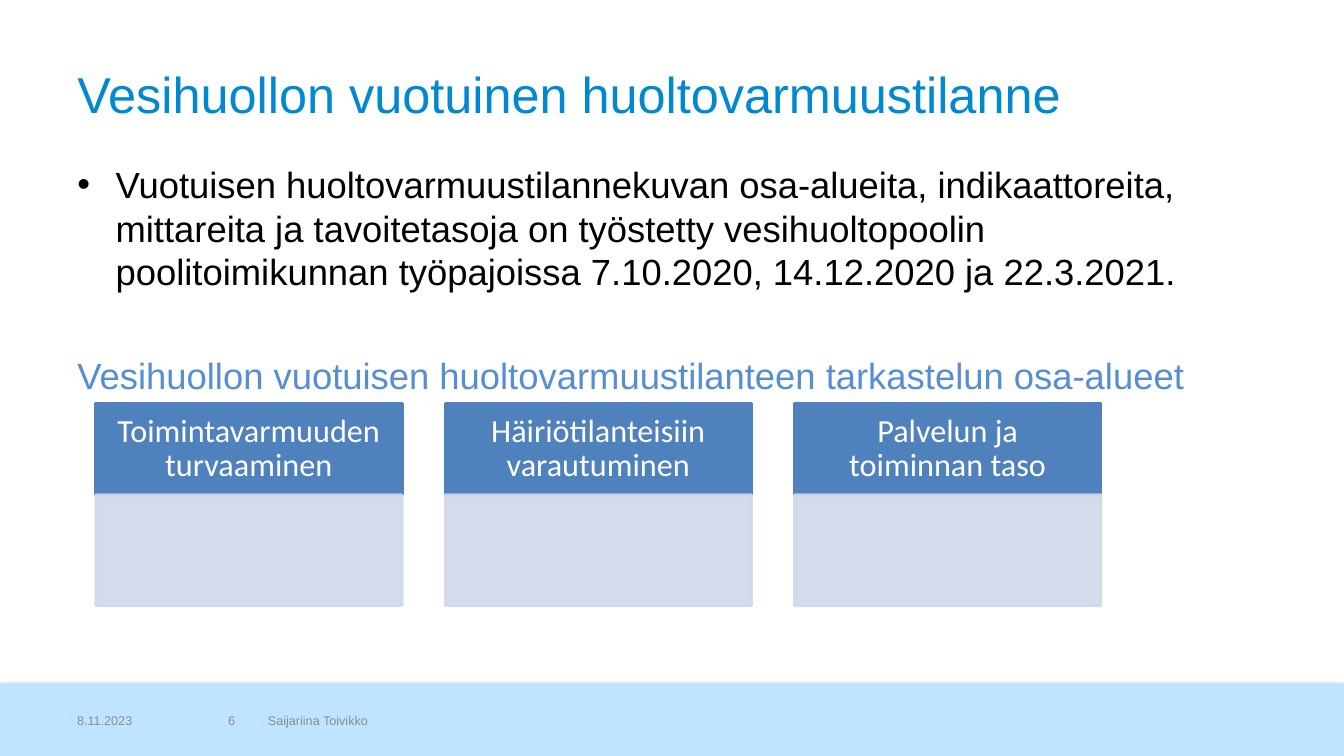
from pptx import Presentation
from pptx.dml.color import RGBColor
from pptx.enum.shapes import MSO_SHAPE
from pptx.enum.text import MSO_ANCHOR, MSO_AUTO_SIZE, PP_ALIGN
from pptx.oxml import parse_xml
from pptx.oxml.ns import nsdecls
from pptx.util import Inches, Pt


def color(value):
    return RGBColor.from_string(value)


def apply(target, values):
    for name, value in values.items():
        setattr(target, name, value)


class Slide:
    """A page on a grid of 40 columns by 30 rows."""

    COLUMNS, ROWS = 40, 30
    MARGIN = 2
    BLUE, PALE, BAND = "4F81BD", "D0D8E8", "BEE4FF"
    TITLE = {"name": "Arial", "size": Pt(36), "color": "0088D0"}
    BODY = {"name": "Arial", "size": Pt(26), "color": "000000"}
    SUBHEAD = {**BODY, "color": "558ED5"}
    FOOTER = {"name": "Arial", "size": Pt(9), "color": "8C8C8C"}
    HEADER = {"name": "Calibri", "size": Pt(23), "color": "FFFFFF"}

    def __init__(self, deck):
        self.deck = deck
        self.page = deck.slides.add_slide(deck.slide_layouts[1])

    def area(self, column, row, columns, rows):
        across = self.deck.slide_width / self.COLUMNS
        down = self.deck.slide_height / self.ROWS
        return (round(column * across), round(row * down),
                round(columns * across), round(rows * down))

    def move(self, box, *cells):
        apply(box, dict(zip(("left", "top", "width", "height"), self.area(*cells))))

    def add_span(self, para, text, style, **layout):
        span = para.add_run()
        span.text = text
        apply(span.font, {"name": style["name"], "size": style["size"]})
        span.font.color.rgb = color(style["color"])
        apply(para, {"alignment": PP_ALIGN.LEFT, **layout})

    def title(self, text, *cells):
        box = self.page.shapes.title
        self.move(box, *cells)
        apply(box.text_frame, {"vertical_anchor": MSO_ANCHOR.MIDDLE,
                               "auto_size": MSO_AUTO_SIZE.NONE})
        self.add_span(box.text_frame.paragraphs[0], text, self.TITLE)

    def body(self, bullet, subhead, *cells):
        box = self.page.placeholders[1]
        self.move(box, *cells)
        frame = box.text_frame
        frame.auto_size = MSO_AUTO_SIZE.NONE
        indent = Inches(0.38)
        first, second = frame.paragraphs[0], frame.add_paragraph()
        for para, left, mark in ((first, indent, '<a:buChar {} char="•"/>'),
                                 (second, 0, "<a:buNone {}/>")):
            properties = para._p.get_or_add_pPr()
            properties.set("marL", str(left))
            properties.set("indent", str(-left))
            properties.append(parse_xml(mark.format(nsdecls("a"))))
        self.add_span(first, bullet, self.BODY, space_before=Pt(0))
        self.add_span(second, subhead, self.SUBHEAD, space_before=Pt(43))

    def rectangle(self, fill, *cells, line=None, opacity=None):
        box = self.page.shapes.add_shape(MSO_SHAPE.RECTANGLE, *self.area(*cells))
        box.shadow.inherit = False
        box.fill.solid()
        box.fill.fore_color.rgb = color(fill)
        if line:
            box.line.color.rgb = color(line)
            box.line.width = Pt(2)
        else:
            box.line.fill.background()
        if opacity:
            for tone in box._element.spPr.iter("{*}srgbClr"):
                tone.append(parse_xml(f'<a:alpha {nsdecls("a")} val="{opacity * 1000}"/>'))
        return box

    def band(self, *cells):
        box = self.rectangle(self.BAND, *cells)
        effects = box._element.spPr.find("{*}effectLst")
        effects.append(parse_xml(
            f'<a:outerShdw {nsdecls("a")} blurRad="{Pt(3.1)}" dist="{Pt(1.8)}" '
            'dir="5400000" rotWithShape="0"><a:srgbClr val="000000">'
            '<a:alpha val="35000"/></a:srgbClr></a:outerShdw>'))
        # The band lies behind the placeholders
        self.page.shapes.title._element.addprevious(box._element)

    def footer(self, text, *cells, alignment=PP_ALIGN.LEFT):
        box = self.page.shapes.add_textbox(*self.area(*cells))
        apply(box.text_frame, {"word_wrap": True, "vertical_anchor": MSO_ANCHOR.MIDDLE})
        self.add_span(box.text_frame.paragraphs[0], text, self.FOOTER, alignment=alignment)

    def card(self, text, column, row, columns, head_rows, body_rows):
        head = self.rectangle(self.BLUE, column, row, columns, head_rows, line=self.BLUE)
        apply(head.text_frame, {
            "word_wrap": True, "vertical_anchor": MSO_ANCHOR.MIDDLE,
            "margin_left": Inches(0.18), "margin_right": Inches(0.18),
            "margin_top": Inches(0.1), "margin_bottom": Inches(0.1)})
        self.add_span(head.text_frame.paragraphs[0], text, self.HEADER,
                      alignment=PP_ALIGN.CENTER, line_spacing=0.9)
        self.rectangle(self.PALE, column, row + head_rows, columns, body_rows,
                       line=self.PALE, opacity=90)


def main():
    deck = Presentation()
    apply(deck, {"slide_width": Inches(13.33), "slide_height": Inches(7.5)})
    slide = Slide(deck)

    # Title and text
    slide.band(0, 27.12, slide.COLUMNS, 2.88)
    slide.title("Vesihuollon vuotuinen huoltovarmuustilanne", slide.MARGIN, 1.2, 36, 5)
    slide.body(
        "Vuotuisen huoltovarmuustilannekuvan osa-alueita, indikaattoreita, mittareita ja "
        "tavoitetasoja on työstetty vesihuoltopoolin poolitoimikunnan työpajoissa "
        "7.10.2020, 14.12.2020 ja 22.3.2021.",
        "Vesihuollon vuotuisen huoltovarmuustilanteen tarkastelun osa-alueet",
        slide.MARGIN, 6.24, 35.4, 18.8)

    # Footer
    footer_row, footer_rows = 27.8, 1.6
    slide.footer("8.11.2023", slide.MARGIN, footer_row, 3.5, footer_rows)
    slide.footer("Saijariina Toivikko", 7.68, footer_row, 12.66, footer_rows)
    slide.footer("6", 5.64, footer_row, 1.65, footer_rows, alignment=PP_ALIGN.RIGHT)

    # Areas of review
    areas = ("Toimintavarmuuden turvaaminen", "Häiriötilanteisiin varautuminen",
             "Palvelun ja toiminnan taso")
    for index, text in enumerate(areas):
        slide.card(text, 2.85 + index * 10.4, 16, 9.12, 3.64, 4.4)

    deck.save("out.pptx")


if __name__ == "__main__":
    main()
